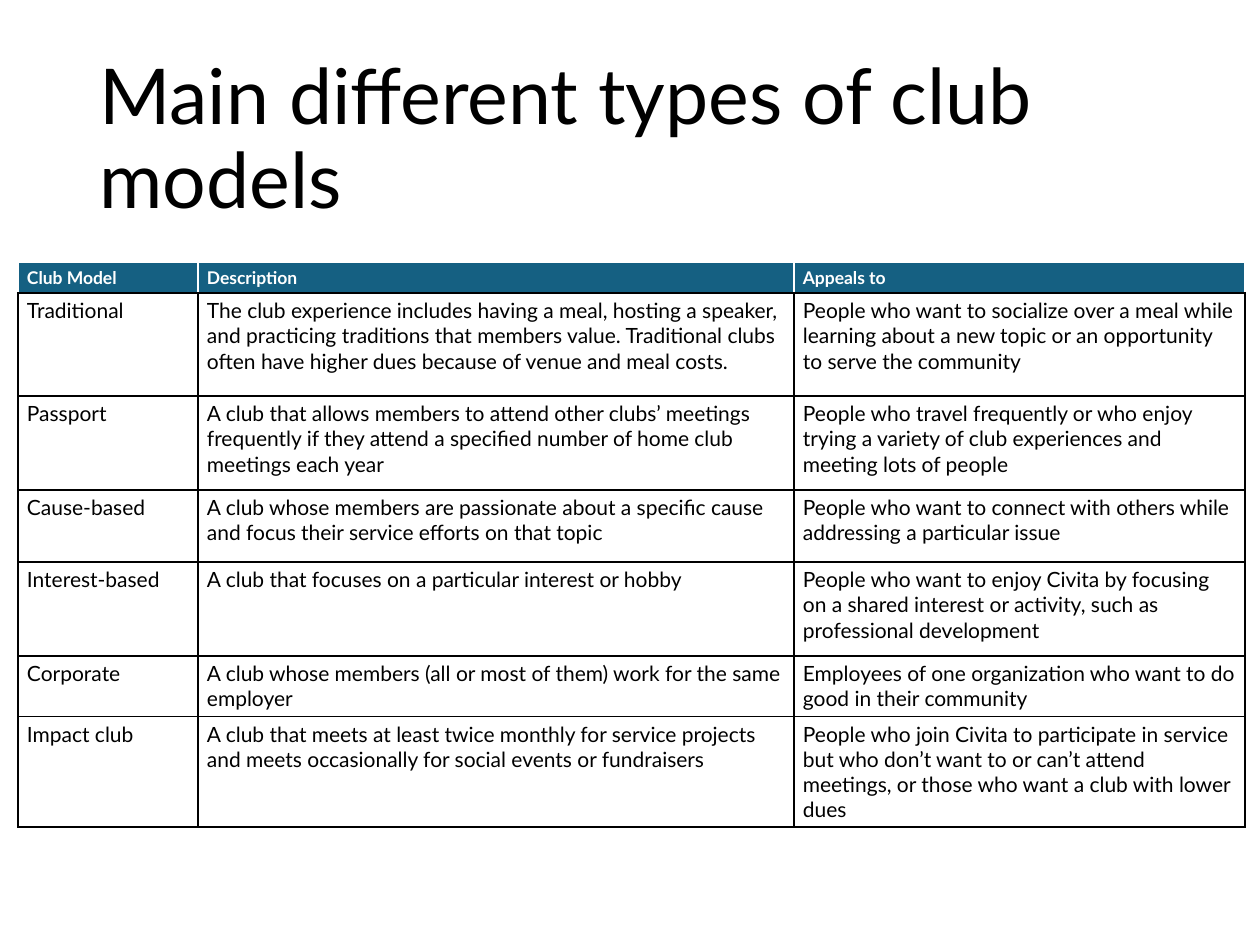
"""Build a slide with a table that compares club models."""
from lxml import etree
from pptx import Presentation
from pptx.dml.color import RGBColor
from pptx.enum.text import MSO_ANCHOR
from pptx.oxml.ns import qn
from pptx.util import Pt

MIDDLE = MSO_ANCHOR.MIDDLE
BLACK = RGBColor(0x00, 0x00, 0x00)
WHITE = RGBColor(0xFF, 0xFF, 0xFF)
TEAL = RGBColor(0x15, 0x60, 0x82)
FONT = "Lato"
SCALE = 914400 / 126

COLUMN_WIDTHS = [180, 596, 451]
ROW_HEIGHTS = [30, 103, 94, 72, 94, 60, 110]
CLUB_MODELS = [
    ("Club Model", "Description", "Appeals to"),
    ("Traditional",
     "The club experience includes having a meal, hosting a speaker, and practicing traditions "
     "that members value. Traditional clubs often have higher dues because of venue and meal costs.",
     "People who want to socialize over a meal while learning about a new topic or an opportunity "
     "to serve the community"),
    ("Passport",
     "A club that allows members to attend other clubs’ meetings frequently if they attend "
     "a specified number of home club meetings each year",
     "People who travel frequently or who enjoy trying a variety of club experiences and "
     "meeting lots of people"),
    ("Cause-based",
     "A club whose members are passionate about a specific cause and focus their service efforts "
     "on that topic",
     "People who want to connect with others while addressing a particular issue"),
    ("Interest-based",
     "A club that focuses on a particular interest or hobby",
     "People who want to enjoy Civita by focusing on a shared interest or activity, such as "
     "professional development"),
    ("Corporate",
     "A club whose members (all or most of them) work for the same employer",
     "Employees of one organization who want to do good in their community"),
    ("Impact club",
     "A club that meets at least twice monthly for service projects and meets occasionally "
     "for social events or fundraisers",
     "People who join Civita to participate in service but who don’t want to or can’t attend "
     "meetings, or those who want a club with lower dues"),
]


def px(length):
    return round(length * SCALE)


def add_borders(cell, colors):
    properties = cell._tc.get_or_add_tcPr()
    for position, (side, color) in enumerate(colors.items()):
        line = etree.Element(qn(f"a:ln{side}"), w=str(Pt(1)))
        fill = etree.SubElement(line, qn("a:solidFill"))
        etree.SubElement(fill, qn("a:srgbClr"), val=str(color))
        properties.insert(position, line)


presentation = Presentation()
presentation.slide_width = px(1260)
presentation.slide_height = px(945)
slide = presentation.slides.add_slide(presentation.slide_layouts[6])

title = slide.shapes.add_textbox(px(87), px(50), px(1086), px(183)).text_frame
title.word_wrap = True
title.vertical_anchor = MIDDLE
title.text = "Main different types of club models"
heading = title.paragraphs[0]
heading.line_spacing = 0.9
heading.font.name = FONT
heading.font.size = Pt(44)
heading.font.color.rgb = BLACK

models = slide.shapes.add_table(
    len(ROW_HEIGHTS), len(COLUMN_WIDTHS), px(18), px(262),
    px(sum(COLUMN_WIDTHS)), px(sum(ROW_HEIGHTS))).table
models.horz_banding = False
for column, width in zip(models.columns, COLUMN_WIDTHS):
    column.width = px(width)

for row, height, entries in zip(models.rows, ROW_HEIGHTS, CLUB_MODELS):
    row.height = px(height)
    is_header = entries is CLUB_MODELS[0]
    edge = WHITE if is_header else BLACK
    for cell, entry in zip(row.cells, entries):
        cell.margin_left = cell.margin_right = px(9)
        cell.margin_top = cell.margin_bottom = px(5)
        cell.fill.solid()
        cell.fill.fore_color.rgb = TEAL if is_header else WHITE
        add_borders(cell, {"L": edge, "R": edge, "T": edge, "B": BLACK})
        cell.text_frame.text = entry
        font = cell.text_frame.paragraphs[0].runs[0].font
        font.name = FONT
        font.size = Pt(10 if is_header else 12)
        font.bold = is_header
        font.color.rgb = WHITE if is_header else BLACK

presentation.save("out.pptx")
